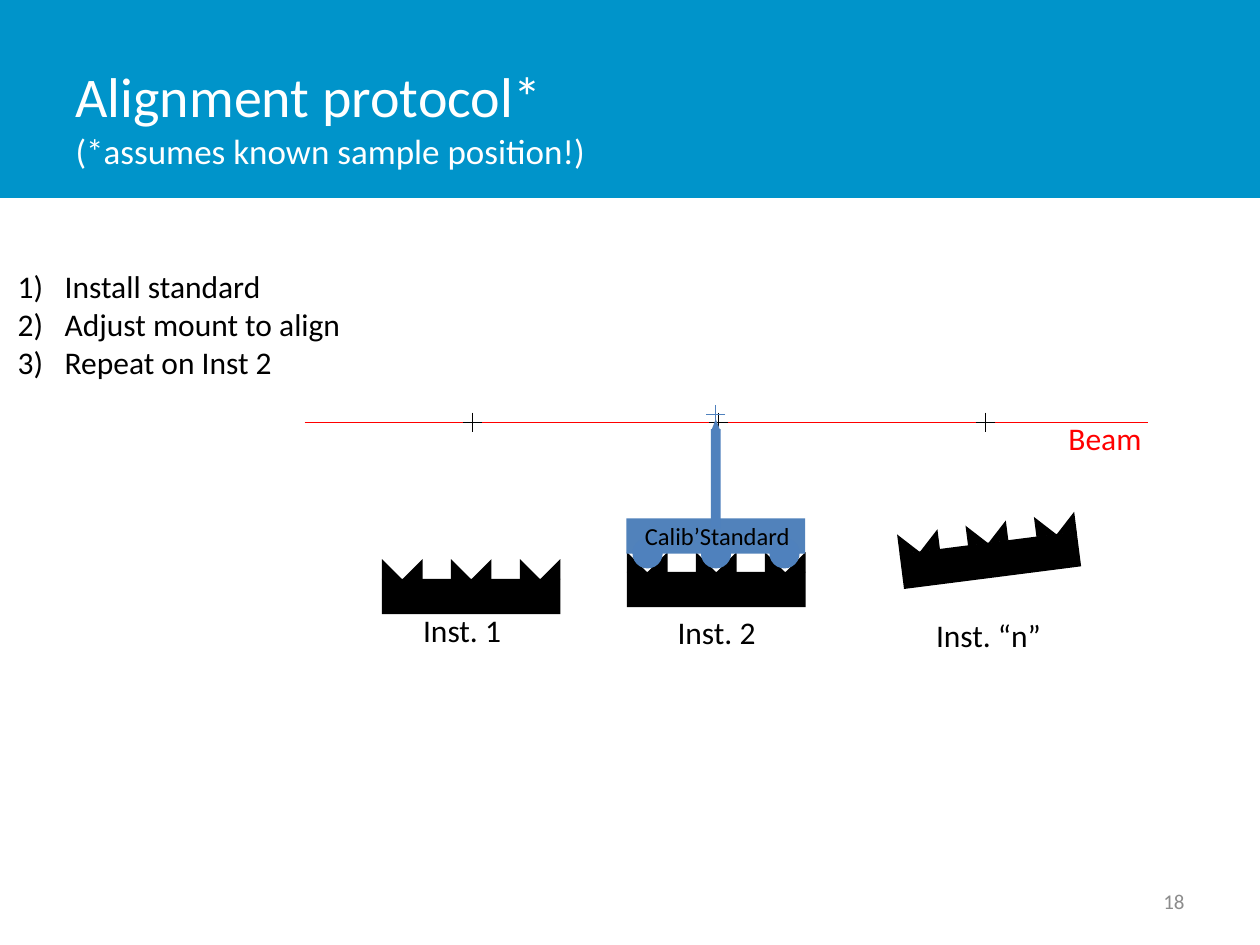
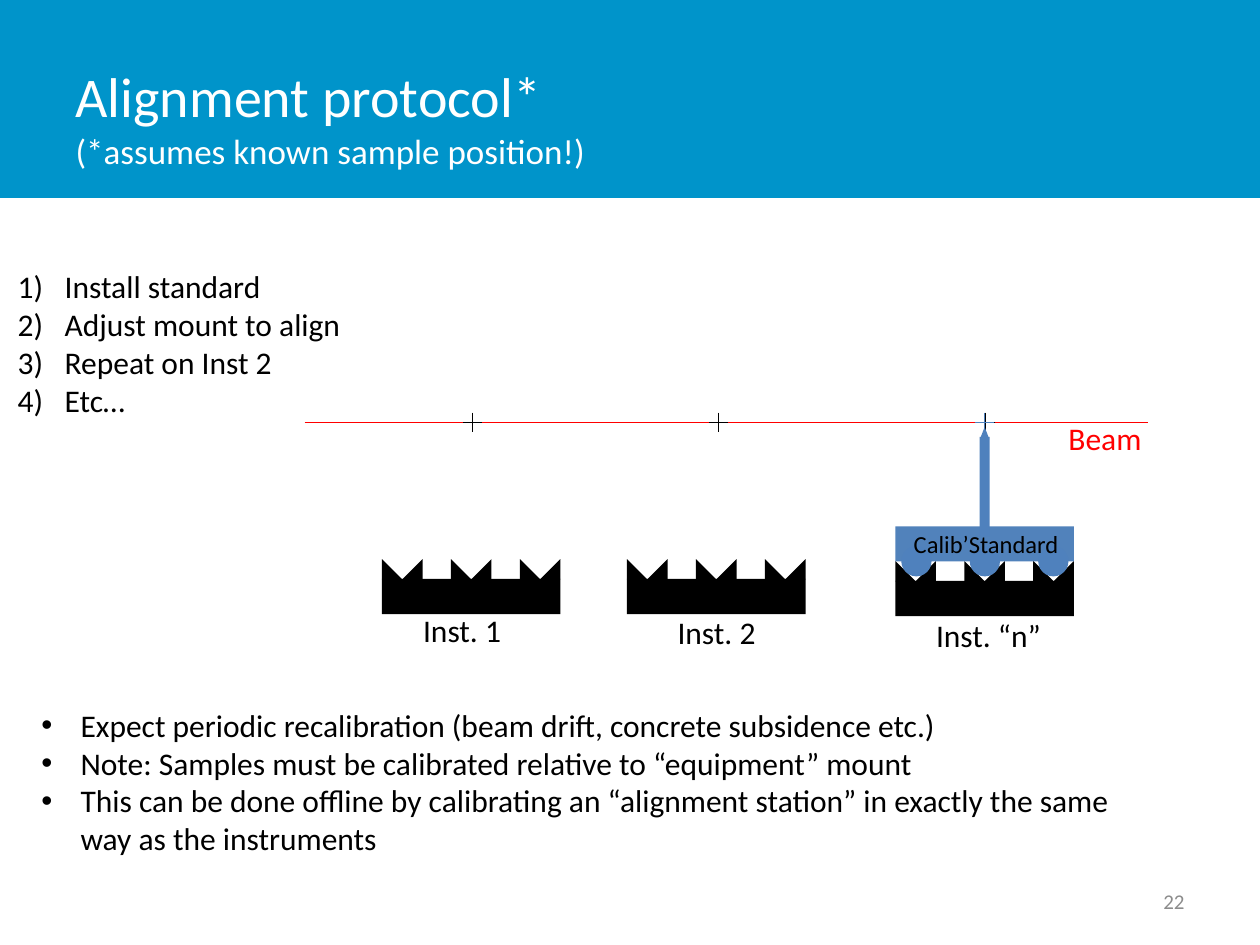
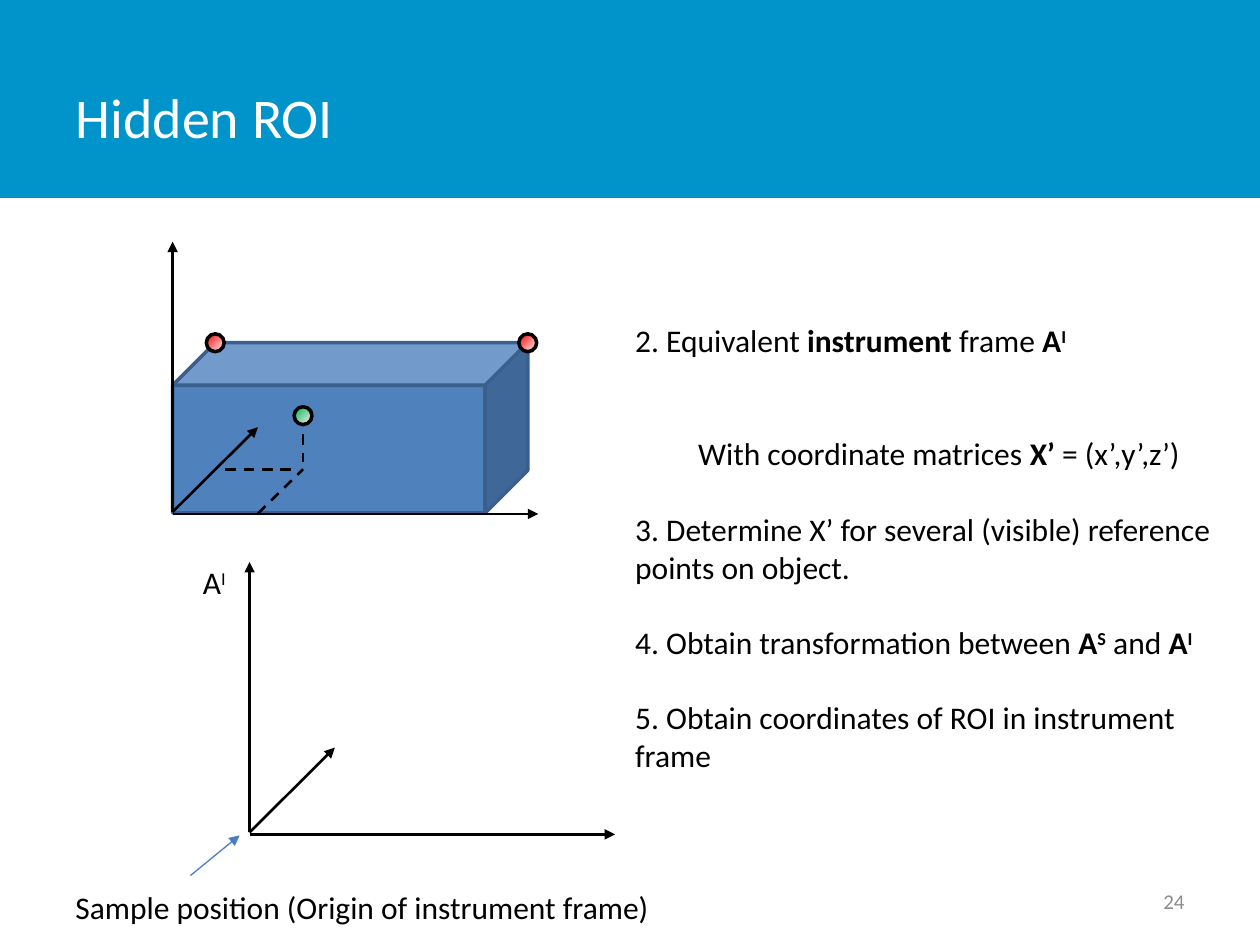
from dataclasses import dataclass

from lxml.etree import SubElement
from pptx import Presentation
from pptx.dml.color import RGBColor
from pptx.enum.dml import MSO_LINE
from pptx.enum.shapes import MSO_CONNECTOR, MSO_SHAPE
from pptx.enum.text import MSO_ANCHOR, MSO_AUTO_SIZE, PP_ALIGN
from pptx.oxml.ns import qn
from pptx.util import Cm, Pt


@dataclass(frozen=True)
class Theme:
    font: str = "Calibri"
    band: str = "0094CA"
    white: str = "FFFFFF"
    black: str = "000000"
    gray: str = "8C8C8C"
    beam: str = "FF0000"
    standard: str = "4F81BD"
    standard_body: str = "5182BB"
    cube_edge: str = "3A5F8C"
    pointer: str = "4B7EBC"
    pale: str = "FCF3F4"
    reference: str = "FF0000"
    region: str = "00B050"
    title_size: int = 32
    subtitle_size: int = 20
    text_size: int = 18
    caption_size: int = 14
    number_size: int = 12
    thin: float = 0.75
    medium: float = 1.5
    thick: float = 2


class Sheet:
    def __init__(self, deck, theme):
        self.deck = deck
        self.theme = theme
        self.slide = None

    def start(self, layout_index, title, number):
        self.slide = self.deck.slides.add_slide(self.deck.slide_layouts[layout_index])
        if len(self.deck.slides) == 1:
            band = self.shape(MSO_SHAPE.RECTANGLE, 0, 0, 25.4, 3.99, self.theme.band)
            self.deck.slide_master.shapes._spTree.insert(2, band._element)
        heading = self.slide.shapes.title
        self.place(heading, 1.27, 0.76, 19.84, 3.18)
        frame = heading.text_frame
        frame.text = title
        frame.auto_size = MSO_AUTO_SIZE.NONE
        frame.vertical_anchor = MSO_ANCHOR.MIDDLE
        para = frame.paragraphs[0]
        para.alignment = PP_ALIGN.LEFT
        sizes = (self.theme.title_size, self.theme.subtitle_size)
        for span, size in zip(para.runs, sizes):
            self.style(span, size, self.theme.white)
        page_number = self.label(str(number), 18.21, 17.65, 5.92, 1.02,
                                 self.theme.number_size, self.theme.gray)
        page_number.text_frame.word_wrap = True
        page_number.text_frame.vertical_anchor = MSO_ANCHOR.MIDDLE
        page_number.text_frame.paragraphs[0].alignment = PP_ALIGN.RIGHT

    def place(self, shape, left, top, width, height):
        shape.left, shape.top = Cm(left), Cm(top)
        shape.width, shape.height = Cm(width), Cm(height)

    def style(self, span, size, color, marks=""):
        span.font.name = self.theme.font
        span.font.size = Pt(size)
        span.font.color.rgb = RGBColor.from_string(color)
        if "b" in marks:
            span.font.bold = True
        if "^" in marks:
            span.font._element.set("baseline", "30000")

    def add_spans(self, para, spans, size=None, color=None):
        if isinstance(spans, str):
            spans = [(spans, "")]
        for text, marks in spans:
            span = para.add_run()
            span.text = text
            self.style(span, size or self.theme.text_size, color or self.theme.black, marks)

    def label(self, spans, left, top, width, height=1.02, size=None, color=None, group=None):
        shapes = (group or self.slide).shapes
        box = shapes.add_textbox(Cm(left), Cm(top), Cm(width), Cm(height))
        box.text_frame.word_wrap = False
        self.add_spans(box.text_frame.paragraphs[0], spans, size, color)
        return box

    def body(self, index, left, top, width, height, entries, bullet="buNone", indent=0, **attributes):
        holder = self.slide.placeholders[index]
        self.place(holder, left, top, width, height)
        frame = holder.text_frame
        frame.word_wrap = True
        frame.auto_size = MSO_AUTO_SIZE.NONE
        for position, (spans, margin, gap) in enumerate(entries):
            para = frame.add_paragraph() if position else frame.paragraphs[0]
            para.space_before = Pt(gap)
            properties = para._p.get_or_add_pPr()
            properties.set("marL", str(Cm(margin + indent)))
            properties.set("indent", str(Cm(-indent)))
            SubElement(properties, qn("a:" + bullet), attributes)
            self.add_spans(para, spans)

    def bullets(self, index, left, top, width, height, items, bullet, indent, **attributes):
        entries = [(item, 0, 0) for item in items]
        self.body(index, left, top, width, height, entries, bullet, indent, **attributes)

    def shape(self, kind, left, top, width, height, fill, edge=None, group=None):
        shapes = (group or self.slide).shapes
        item = shapes.add_shape(kind, Cm(left), Cm(top), Cm(width), Cm(height))
        item.shadow.inherit = False
        item.fill.solid()
        item.fill.fore_color.rgb = RGBColor.from_string(fill)
        if edge:
            item.line.color.rgb = RGBColor.from_string(edge)
            item.line.width = Pt(self.theme.thick)
        else:
            item.line.fill.background()
        return item

    def line(self, start, end, color, width, arrow=False, dashed=False, group=None):
        shapes = (group or self.slide).shapes
        points = [Cm(value) for value in (*start, *end)]
        connector = shapes.add_connector(MSO_CONNECTOR.STRAIGHT, *points)
        connector.line.color.rgb = RGBColor.from_string(color)
        connector.line.width = Pt(width)
        if dashed:
            connector.line.dash_style = MSO_LINE.DASH
        if arrow:
            SubElement(connector.line._get_or_add_ln(), qn("a:tailEnd"), type="triangle")
        SubElement(connector._element.spPr, qn("a:effectLst"))

    def cross(self, x, y, color, group=None):
        group = group or self.slide.shapes.add_group_shape()
        arm = 0.19
        self.line((x, y - arm), (x, y + arm), color, self.theme.thin, group=group)
        self.line((x + arm, y), (x - arm, y), color, self.theme.thin, group=group)

    def mount(self, left, top, rotation=0):
        group = self.slide.shapes.add_group_shape()
        black, tooth, pitch = self.theme.black, 0.41, 1.39
        self.shape(MSO_SHAPE.RECTANGLE, left, top + 0.4, 3.6, 0.71, black, group=group)
        for notch in range(3):
            x = left + notch * pitch
            self.shape(MSO_SHAPE.RIGHT_TRIANGLE, x, top, tooth, tooth, black, group=group)
            mirrored = self.shape(MSO_SHAPE.RIGHT_TRIANGLE, x + tooth, top, tooth, tooth,
                                  black, group=group)
            mirrored._element.spPr.xfrm.set("flipH", "1")
        group.rotation = rotation

    def calibration_standard(self, left, top):
        group = self.slide.shapes.add_group_shape()
        blue = self.theme.standard
        self.shape(MSO_SHAPE.RECTANGLE, left, top, 3.6, 0.71, self.theme.standard_body, group=group)
        for foot in range(3):
            self.shape(MSO_SHAPE.OVAL, left + 0.12 + foot * 1.38, top + 0.4, 0.61, 0.61,
                       blue, group=group)
        self.shape(MSO_SHAPE.RECTANGLE, left + 1.7, top - 1.8, 0.2, 2, blue, group=group)
        self.cross(left + 1.8, top - 2.1, blue, group)
        self.shape(MSO_SHAPE.ISOSCELES_TRIANGLE, left + 1.71, top - 2, 0.18, 0.23, blue, group=group)
        self.label("Calib’Standard", left + 0.12, top - 0.08, 3.48, 0.86,
                   self.theme.caption_size, group=group)

    def marker(self, x, y, color):
        diameter = 0.36
        dot = self.shape(MSO_SHAPE.OVAL, x - diameter / 2, y - diameter / 2, diameter, diameter,
                         color, self.theme.black)
        dot.fill.gradient()
        for stop, shade, position in zip(dot.fill.gradient_stops, (self.theme.pale, color), (0, 1)):
            stop.color.rgb = RGBColor.from_string(shade)
            stop.position = position
        gradient = dot._element.spPr.find(qn("a:gradFill"))
        gradient.remove(gradient.find(qn("a:lin")))
        circle = SubElement(gradient, qn("a:path"), path="circle")
        SubElement(circle, qn("a:fillToRect"), l="100000", t="100000")

    def axes(self, x, y):
        base = y + 0.04
        for start, end in (
            ((x, y), (x, y - 5.45)),
            ((x, y), (x + 1.72, y - 1.71)),
            ((x, base), (x + 7.37, base)),
        ):
            self.line(start, end, self.theme.black, self.theme.medium, arrow=True)

    def alignment(self, layout_index, number, steps, mounts, standard):
        self.start(layout_index, "Alignment protocol*\v(*assumes known sample position!)", number)
        for mount in mounts:
            self.mount(*mount)
        for text, left, top, width in (
            ("Inst. 1", 8.28, 12.19, 2.11),
            ("Inst. 2", 13.41, 12.24, 2.11),
            ("Inst. “n”", 18.62, 12.29, 2.64),
        ):
            self.label(text, left, top, width)
        self.bullets(1, 0.1, 5.26, 7.4, 3.33, steps, "buAutoNum", 0.95, type="arabicParenR")
        beam_height = 8.51
        self.line((6.14, beam_height), (23.14, beam_height), self.theme.beam, self.theme.thin)
        self.label("Beam", 21.29, 8.33, 2.01, color=self.theme.beam)
        for x in (9.52, 14.48, 19.87):
            self.cross(x, beam_height, self.theme.black)
        self.calibration_standard(*standard)

    def hidden_region(self):
        theme = self.theme
        self.start(1, "Hidden ROI", 24)
        self.shape(MSO_SHAPE.CUBE, 3.48, 6.91, 7.16, 3.43, theme.standard, theme.cube_edge)
        for x in (4.34, 10.64):
            self.marker(x, 6.91, theme.reference)
        self.axes(3.48, 10.32)
        for start, end in (
            ((5.2, 10.35), (6.11, 9.46)),
            ((4.54, 9.46), (5.94, 9.46)),
            ((6.11, 8.38), (6.11, 9.32)),
        ):
            self.line(start, end, theme.black, theme.medium, dashed=True)
        self.marker(6.11, 8.38, theme.region)
        self.axes(5.03, 16.78)
        blank = 21.5
        instrument_frame = [("A", "b"), ("I", "b^")]
        self.body(1, 12.55, 6.35, 12.22, 10.01, [
            ([("2. Equivalent ", ""), ("instrument", "b"), (" frame ", ""), *instrument_frame], 0, 0),
            ([("With coordinate matrices ", ""), ("X’", "b"), (" = (x’,y’,z’)", "")], 1.27, 2 * blank),
            ("3. Determine X’ for several (visible) reference points on object.", 0, blank),
            ([("4. Obtain transformation between ", ""), ("A", "b"), ("S", "b^"), (" and ", ""),
              *instrument_frame], 0, blank),
            ("5. Obtain coordinates of ROI in instrument frame", 0, blank),
        ])
        self.label([("A", ""), ("I", "^")], 3.84, 11.23, 0.99)
        self.label("Sample position (Origin of instrument frame)", 1.27, 17.78, 12.22)
        self.line((3.84, 17.65), (4.83, 16.84), theme.pointer, theme.thin, arrow=True)


def main():
    deck = Presentation()
    deck.slide_width, deck.slide_height = Cm(25.4), Cm(19.05)
    sheet = Sheet(deck, Theme())
    steps = ["Install standard", "Adjust mount to align", "Repeat on Inst 2"]
    first_mount = (7.7, 11.27)
    sheet.alignment(1, 18, steps,
                    [first_mount, (12.64, 11.13), (18.14, 10.54, 352.7)], (12.63, 10.45))
    sheet.alignment(3, 22, steps + ["Etc…"],
                    [first_mount, (12.64, 11.27), (18.05, 11.31)], (18.05, 10.61))
    sheet.bullets(2, 0.58, 14.1, 23.11, 3.33, [
        "Expect periodic recalibration (beam drift, concrete subsidence etc.)",
        "Note: Samples must be calibrated relative to “equipment” mount",
        "This can be done offline by calibrating an “alignment station” in exactly the same way "
        "as the instruments",
    ], "buChar", 0.79, char="•")
    sheet.hidden_region()
    deck.save("out.pptx")


if __name__ == "__main__":
    main()
